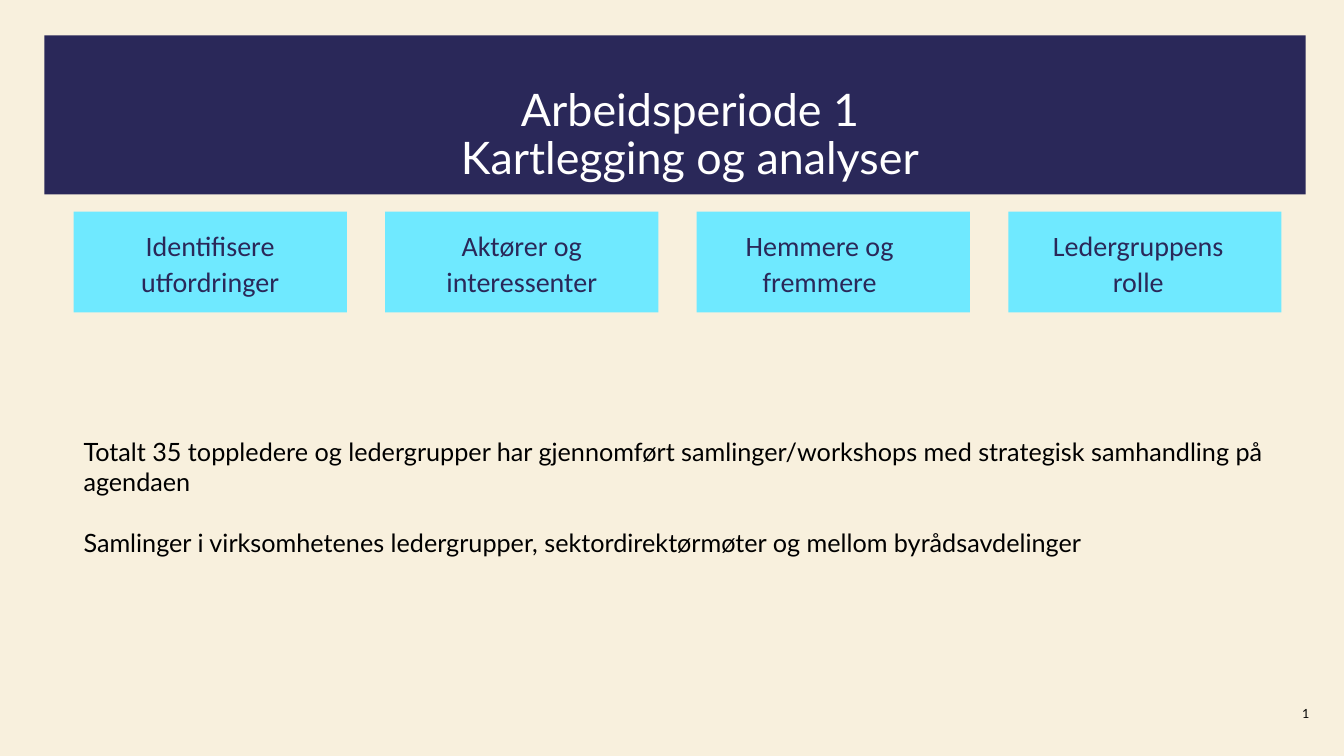
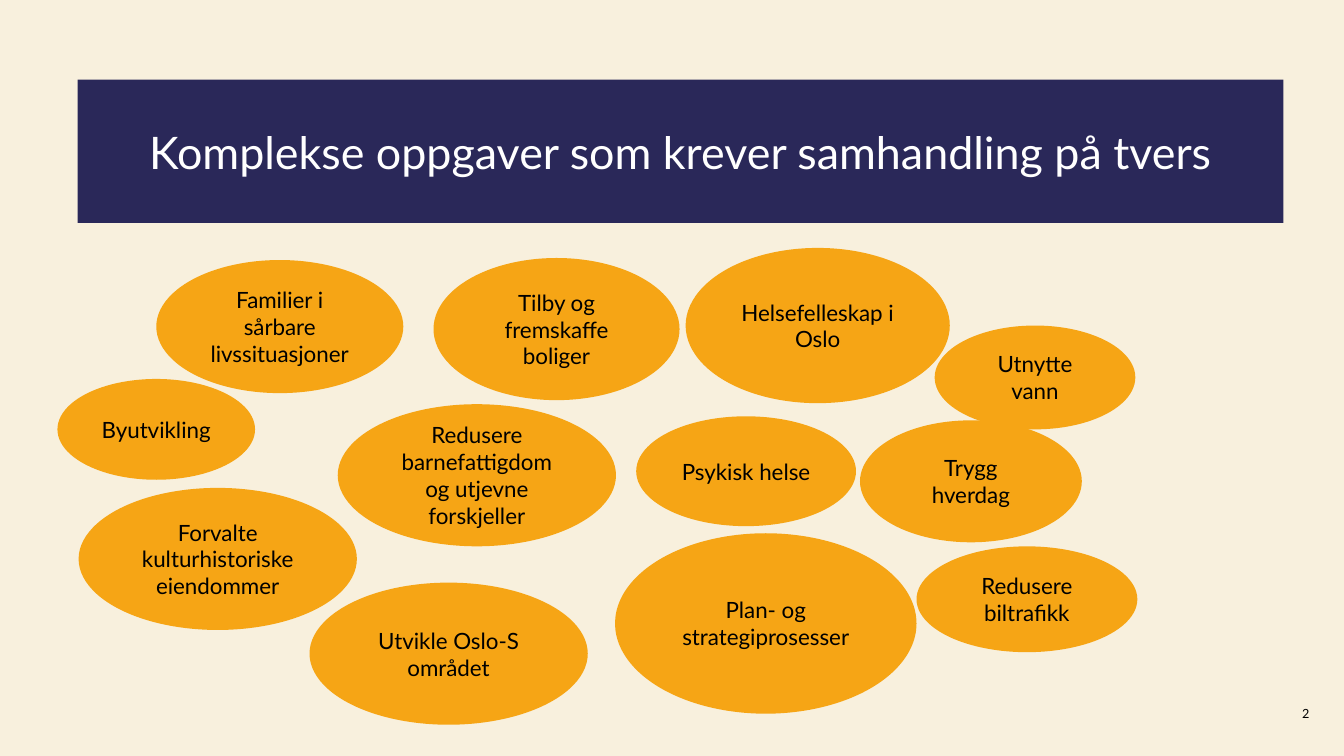
import dataclasses
from typing import Optional

import pptx
import pptx.dml.color
import pptx.enum.shapes
import pptx.enum.text
import pptx.oxml
import pptx.oxml.ns
import pptx.util

Inches = pptx.util.Inches
Pt = pptx.util.Pt
Align = pptx.enum.text.PP_ALIGN
Anchor = pptx.enum.text.MSO_ANCHOR
Shape = pptx.enum.shapes.MSO_SHAPE

COLORS = {
    "cream": "F8F0DD",
    "navy": "2A2859",
    "cyan": "6FE9FF",
    "orange": "F6A515",
    "white": "FFFFFF",
    "black": "000000",
}


@dataclasses.dataclass(frozen=True)
class Box:
    left: float
    top: float
    width: float
    height: float

    def lengths(self) -> tuple:
        return tuple(Inches(v) for v in dataclasses.astuple(self))


@dataclasses.dataclass(frozen=True)
class TextStyle:
    size: float
    color: str = "black"
    font: str = "Lato"
    align: Align = Align.CENTER
    anchor: Anchor = Anchor.MIDDLE
    line_spacing: Optional[float] = None
    gap: float = 0
    insets: tuple = (0.1, 0.05, 0.1, 0.05)


@dataclasses.dataclass(frozen=True)
class Card:
    text: str
    right_inset: float = 0.1


@dataclasses.dataclass(frozen=True)
class Bubble:
    text: str
    box: Box


TITLE = TextStyle(32, "white", insets=(0, 0, 0, 0))
PERIOD_TITLE = dataclasses.replace(
    TITLE, anchor=Anchor.TOP, line_spacing=0.9, insets=(0.61, 0.52, 0.31, 0))
CARD = TextStyle(20, "navy", "Calibri", line_spacing=1.07)
BODY = TextStyle(18, align=Align.LEFT, anchor=Anchor.TOP, gap=22)
BUBBLE = TextStyle(16)
PAGE_NUMBER = TextStyle(9)

CARD_LEFT, CARD_TOP, CARD_PITCH = 0.73, 2.1, 3.09
CARD_WIDTH, CARD_HEIGHT = 2.71, 1

CARDS = [
    Card("Identifisere utfordringer"),
    Card("Aktører og\ninteressenter"),
    Card("Hemmere og fremmere", 0.37),
    Card("Ledergruppens\nrolle", 0.23),
]

BODY_TEXT = (
    "Totalt 35 toppledere og ledergrupper har gjennomført samlinger/workshops "
    "med strategisk samhandling på agendaen\n"
    "Samlinger i virksomhetenes ledergrupper, sektordirektørmøter og mellom "
    "byrådsavdelinger"
)

BUBBLES = [
    Bubble("Familier i sårbare livssituasjoner", Box(1.55, 2.58, 2.45, 1.32)),
    Bubble("Tilby og fremskaffe boliger", Box(4.3, 2.56, 2.44, 1.41)),
    Bubble("Byutvikling", Box(0.57, 3.76, 1.96, 1)),
    Bubble("Redusere barnefattigdom og utjevne forskjeller",
           Box(3.35, 4.01, 2.76, 1.41)),
    Bubble("Psykisk helse", Box(6.31, 4.13, 2.18, 1.09)),
    Bubble("Helsefelleskap i Oslo", Box(6.8, 2.46, 2.62, 1.54)),
    Bubble("Trygg hverdag", Box(8.53, 4.17, 2.2, 1.21)),
    Bubble("Forvalte kulturhistoriske eiendommer",
           Box(0.78, 4.84, 2.76, 1.41)),
    Bubble("Utvikle Oslo-S området", Box(3.07, 5.78, 2.76, 1.41)),
    Bubble("Utnytte vann", Box(9.27, 3.23, 1.99, 1.03)),
    Bubble("Redusere biltrafikk", Box(9.09, 5.42, 2.19, 1.05)),
    Bubble("Plan- og strategiprosesser", Box(6.1, 5.29, 2.99, 1.79)),
]


def rgb(name: str) -> pptx.dml.color.RGBColor:
    return pptx.dml.color.RGBColor.from_string(COLORS[name])


def fill(sp, color: str) -> None:
    sp.fill.solid()
    sp.fill.fore_color.rgb = rgb(color)


def write(sp, text: str, style: TextStyle) -> None:
    tf = sp.text_frame
    tf.text = text
    tf.word_wrap = True
    tf.auto_size = pptx.enum.text.MSO_AUTO_SIZE.NONE
    tf.vertical_anchor = style.anchor
    (tf.margin_left, tf.margin_top,
     tf.margin_right, tf.margin_bottom) = map(Inches, style.insets)
    for i, p in enumerate(tf.paragraphs):
        p.alignment = style.align
        p.space_before = Pt(style.gap if i else 0)
        if style.line_spacing:
            p.line_spacing = style.line_spacing
        for r in p.runs:
            r.font.name = style.font
            r.font.size = Pt(style.size)
            r.font.color.rgb = rgb(style.color)


def add_panel(s, kind: Shape, box: Box, color: str, text: str,
              style: TextStyle) -> None:
    sp = s.shapes.add_shape(kind, *box.lengths())
    sp.shadow.inherit = False
    fill(sp, color)
    sp.line.fill.background()
    write(sp, text, style)


def add_text(s, box: Box, text: str, style: TextStyle):
    sp = s.shapes.add_textbox(*box.lengths())
    write(sp, text, style)
    return sp


def add_page_number(s, number: int) -> None:
    sp = add_text(s, Box(12.57, 6.88, 0.76, 0.4), str(number), PAGE_NUMBER)
    r = sp.text_frame.paragraphs[0].runs[0]._r
    fld = pptx.oxml.parse_xml(
        f'<a:fld {pptx.oxml.ns.nsdecls("a")} type="slidenum" '
        'id="{B6F15528-21DE-4FAA-801E-634DDDAF4B2B}"/>')
    r.addprevious(fld)
    fld.extend(list(r))
    r.getparent().remove(r)


def add_slide(prs, title: str, box: Box, style: TextStyle, number: int):
    s = prs.slides.add_slide(prs.slide_layouts.get_by_name("Title Only"))
    sp = s.shapes.title
    sp.left, sp.top, sp.width, sp.height = box.lengths()
    fill(sp.fill and sp, "navy")
    write(sp, title, style)
    add_page_number(s, number)
    return s


def build_period(prs) -> None:
    s = add_slide(prs, "Arbeidsperiode 1\nKartlegging og analyser",
                  Box(0.44, 0.35, 12.51, 1.58), PERIOD_TITLE, 2)
    for i, card in enumerate(CARDS):
        box = Box(CARD_LEFT + i * CARD_PITCH, CARD_TOP, CARD_WIDTH, CARD_HEIGHT)
        style = dataclasses.replace(
            CARD, insets=(0.1, 0.05, card.right_inset, 0.05))
        add_panel(s, Shape.RECTANGLE, box, "cyan", card.text, style)
    add_text(s, Box(0.73, 4.28, 12.11, 1.62), BODY_TEXT, BODY)


def build_tasks(prs) -> None:
    s = add_slide(prs, "Komplekse oppgaver som krever samhandling på tvers",
                  Box(0.77, 0.79, 11.96, 1.42), TITLE, 3)
    for bubble in BUBBLES:
        add_panel(s, Shape.OVAL, bubble.box, "orange", bubble.text, BUBBLE)


def main() -> None:
    prs = pptx.Presentation()
    prs.slide_width, prs.slide_height = Inches(13.33), Inches(7.5)
    fill(prs.slide_master.background, "cream")
    build_period(prs)
    build_tasks(prs)
    prs.save("out.pptx")


if __name__ == "__main__":
    main()
